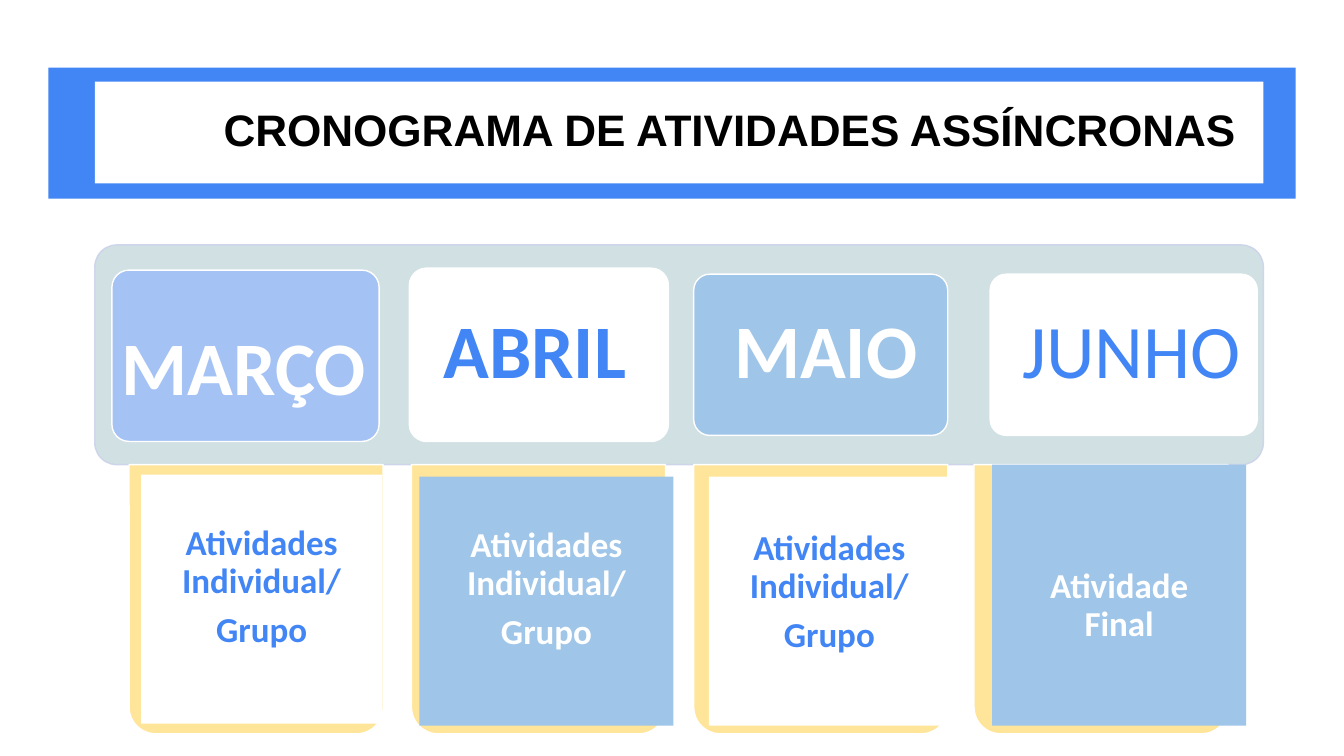
from pptx import Presentation
from pptx.dml.color import RGBColor
from pptx.enum.shapes import MSO_SHAPE as Shape
from pptx.enum.text import MSO_ANCHOR as Anchor, MSO_AUTO_SIZE as AutoSize, PP_ALIGN as Align
from pptx.oxml.ns import qn
from pptx.util import Inches, Pt
from lxml.etree import SubElement

COLORS = {
    "blue": "4285F4", "white": "FFFFFF", "black": "000000",
    "band": "D0E0E3", "edge": "CCD3EA", "periwinkle": "A4C2F4",
    "sky": "9FC5E8", "yellow": "FFE599",
}
TASKS = ["Atividades Individual/", "Grupo"]
MONTHS = [
    {"name": "MARÇO", "bold": True, "ink": "white", "label": (1.09, 3.12, 2.65, 1.01),
     "tile": (1.11, 2.68, 2.65, 1.7), "tile_fill": "periwinkle", "back_left": 1.28,
     "panel": (1.4, 4.71, 2.39, 2.47), "panel_fill": "white", "panel_ink": "blue",
     "tasks": TASKS, "inset": 0.19, "top": 0.5},
    {"name": "ABRIL", "bold": True, "ink": "blue", "label": (4.29, 2.96, 2.03, 1.01),
     "tile": (4.06, 2.66, 2.57, 1.72), "tile_fill": "white", "back_left": 4.08,
     "panel": (4.16, 4.73, 2.52, 2.47), "panel_fill": "sky", "panel_ink": "white",
     "tasks": TASKS, "inset": 0.19, "top": 0.5},
    {"name": "MAIO", "bold": True, "ink": "white", "label": (7.17, 2.96, 2.04, 1.01),
     "tile": (6.88, 2.72, 2.52, 1.6), "tile_fill": "sky", "back_left": 6.88,
     "panel": (7.03, 4.73, 2.39, 2.47), "panel_fill": "white", "panel_ink": "blue",
     "tasks": TASKS, "inset": 0.19, "top": 0.53},
    {"name": "JUNHO", "bold": False, "ink": "blue", "label": (10.03, 2.96, 2.39, 1.01),
     "tile": (9.82, 2.72, 2.65, 1.6), "tile_fill": "white", "back_left": 9.66,
     "panel": (9.84, 4.61, 2.52, 2.59), "panel_fill": "sky", "panel_ink": "white",
     "tasks": ["Atividade Final"], "inset": 0.2, "top": 1.03},
]


def color(name):
    return RGBColor.from_string(COLORS[name])


def inches(box):
    return [Inches(value) for value in box]


def set_all(target, values):
    for name, value in values.items():
        setattr(target, name, value)


def add_block(slide, kind, box, fill, edge=None, adjustments=()):
    block = slide.shapes.add_shape(kind, *inches(box))
    block.shadow.inherit = False
    block.fill.solid()
    block.fill.fore_color.rgb = color(fill)
    if edge:
        block.line.color.rgb = color(edge)
        block.line.width = Pt(1)
    else:
        block.line.fill.background()
    for index, value in enumerate(adjustments):
        block.adjustments[index] = value
    return block


def write(shape, lines, font, insets, ink, spacing=None, before=0, anchor=Anchor.TOP):
    frame = shape.text_frame
    left, top, right, bottom = inches(insets)
    set_all(frame, {"word_wrap": True, "auto_size": AutoSize.NONE, "vertical_anchor": anchor,
                    "margin_left": left, "margin_top": top,
                    "margin_right": right, "margin_bottom": bottom})
    for index, line in enumerate(lines):
        paragraph = frame.add_paragraph() if index else frame.paragraphs[0]
        set_all(paragraph, {"alignment": Align.CENTER, "line_spacing": spacing,
                            "space_before": Pt(before if index else 0)})
        run = paragraph.add_run()
        run.text = line
        set_all(run.font, font)
        run.font.color.rgb = color(ink)


def add_title(slide):
    banner = add_block(slide, Shape.RECTANGLE, (0.48, 0.67, 12.37, 1.3), "blue")
    title = slide.shapes.title
    title._element.addprevious(banner._element)
    left, top, width, height = inches((0.94, 0.81, 11.59, 1.01))
    set_all(title, {"left": left, "top": top, "width": width, "height": height})
    title.fill.solid()
    title.fill.fore_color.rgb = color("white")
    write(title, ["CRONOGRAMA DE ATIVIDADES ASSÍNCRONAS"],
          {"name": "Arial", "size": Pt(31.5), "bold": True},
          (1, 0.05, 0, 0.05), "black", spacing=0.9, anchor=Anchor.MIDDLE)


def add_band(slide):
    band = add_block(slide, Shape.ROUNDED_RECTANGLE, (0.94, 2.43, 11.59, 2.18),
                     "band", "edge", [0.1])
    edge_color = band.line._ln.find(".//" + qn("a:srgbClr"))
    SubElement(edge_color, qn("a:alpha"), val="90000")


def add_month(slide, month):
    add_block(slide, Shape.ROUNDED_RECTANGLE, month["tile"], month["tile_fill"], "white", [0.1])
    back = add_block(slide, Shape.ROUND_2_SAME_RECTANGLE, (month["back_left"], 4.61, 2.52, 2.67),
                     "yellow", "white", [0.105, 0])
    back.rotation = 180
    panel = add_block(slide, Shape.RECTANGLE, month["panel"], month["panel_fill"])
    inset = month["inset"]
    write(panel, month["tasks"], {"name": "Calibri", "size": Pt(25), "bold": True},
          (inset, month["top"], inset, inset), month["panel_ink"], spacing=0.9, before=8.4)
    label = slide.shapes.add_textbox(*inches(month["label"]))
    write(label, [month["name"]], {"name": "Calibri", "size": Pt(54), "bold": month["bold"]},
          (0.1, 0.05, 0.1, 0.05), month["ink"])


def main():
    deck = Presentation()
    set_all(deck, {"slide_width": Inches(13.33), "slide_height": Inches(7.5)})
    slide = deck.slides.add_slide(deck.slide_layouts[5])
    add_title(slide)
    add_band(slide)
    for month in MONTHS:
        add_month(slide, month)
    deck.save("out.pptx")


if __name__ == "__main__":
    main()
